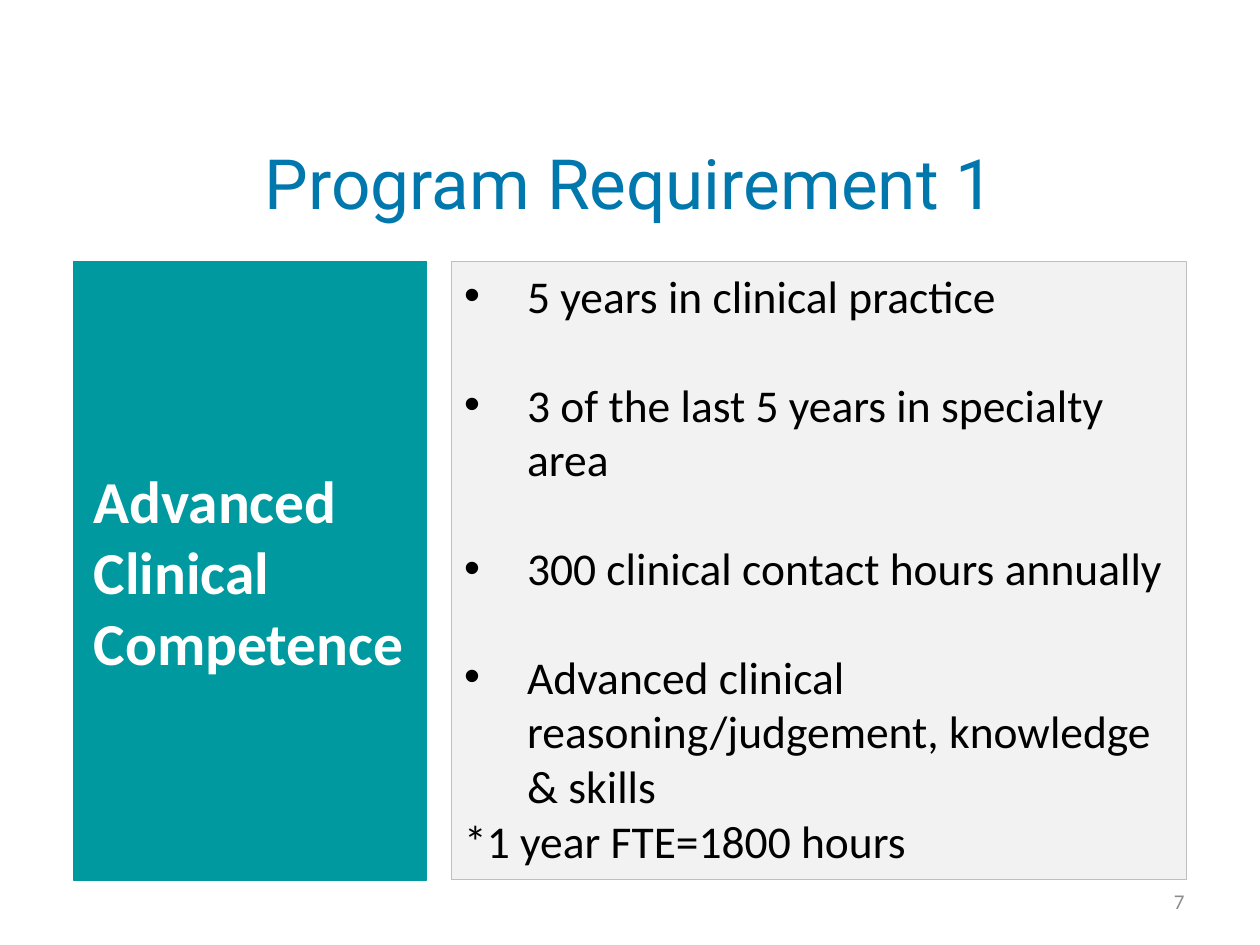
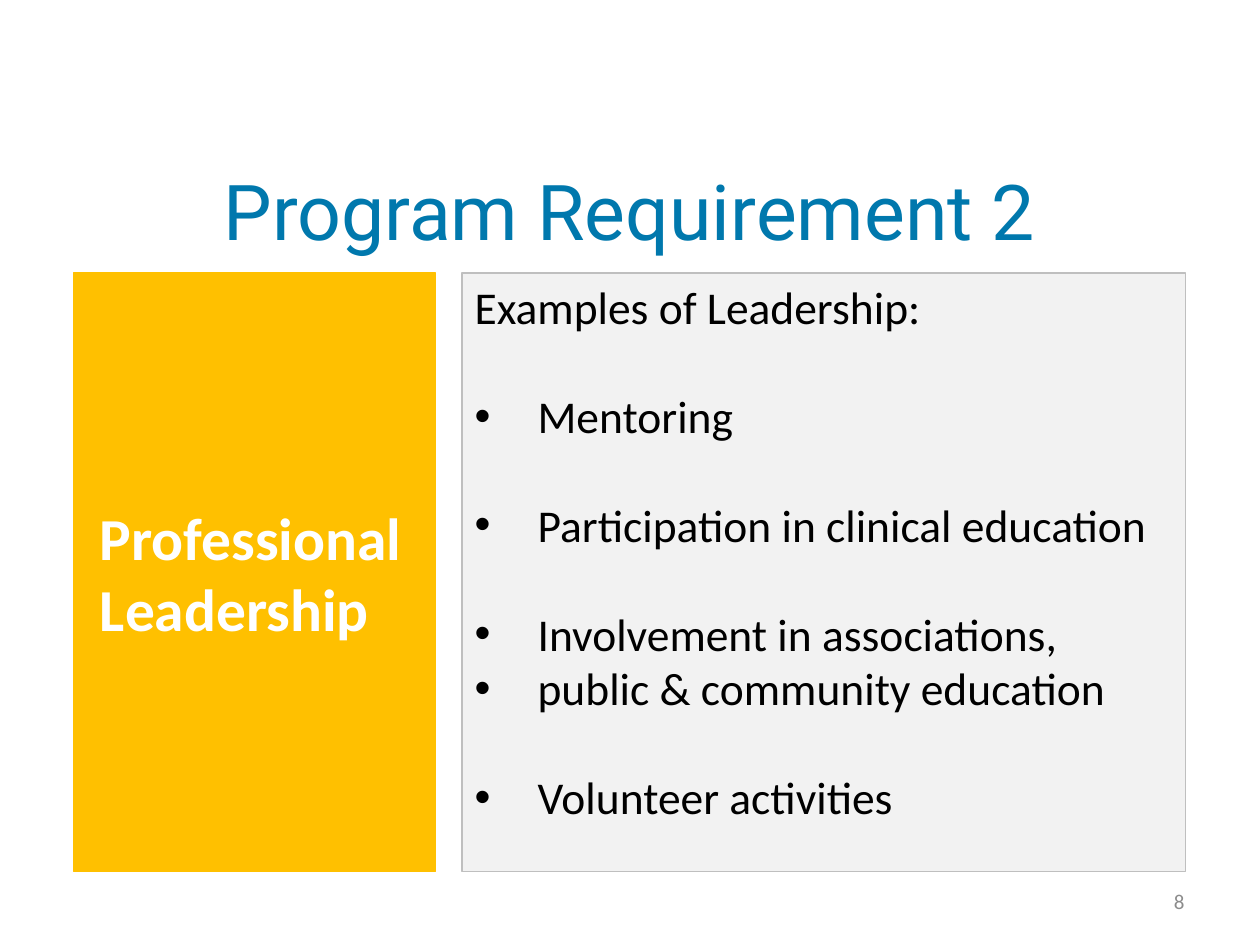
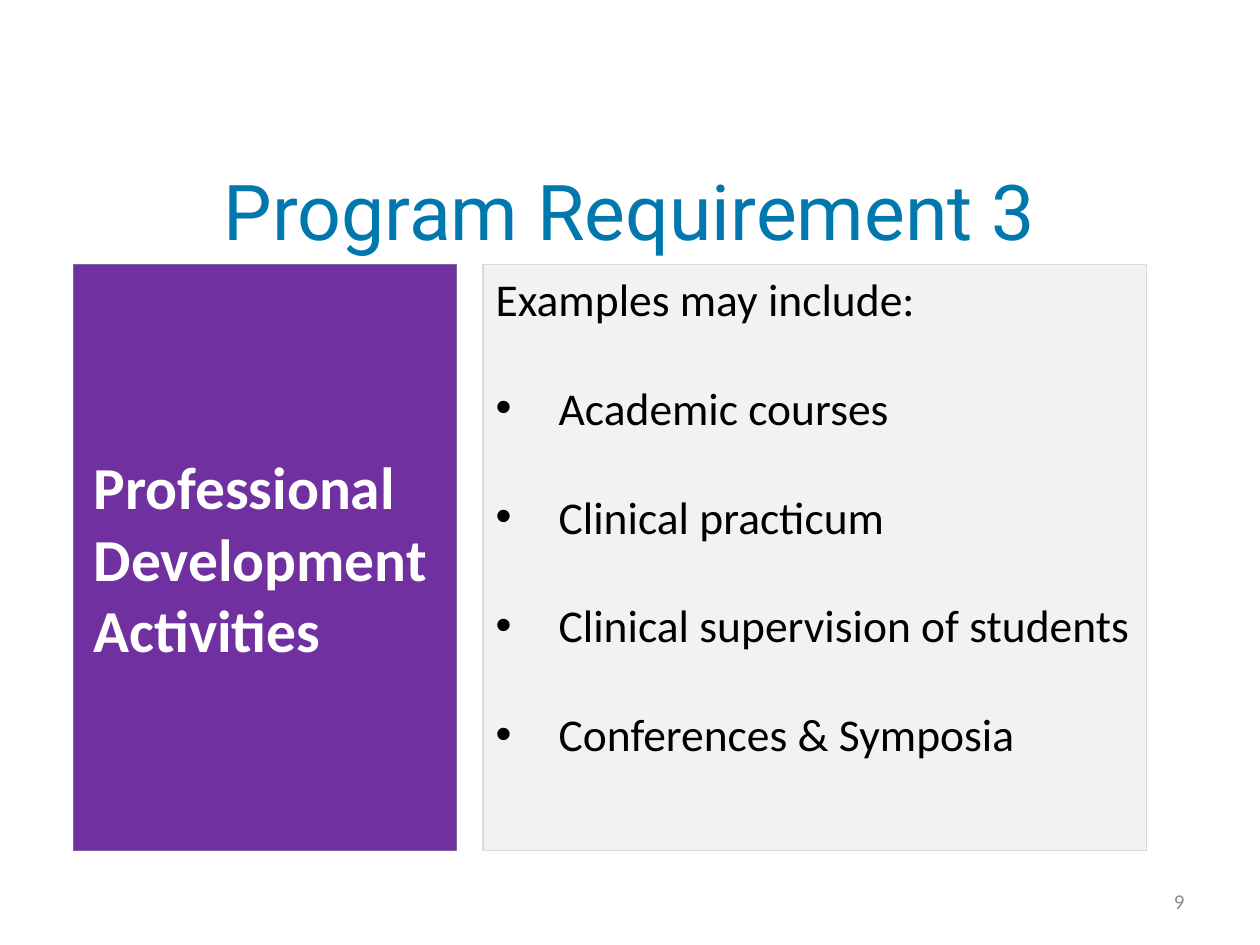
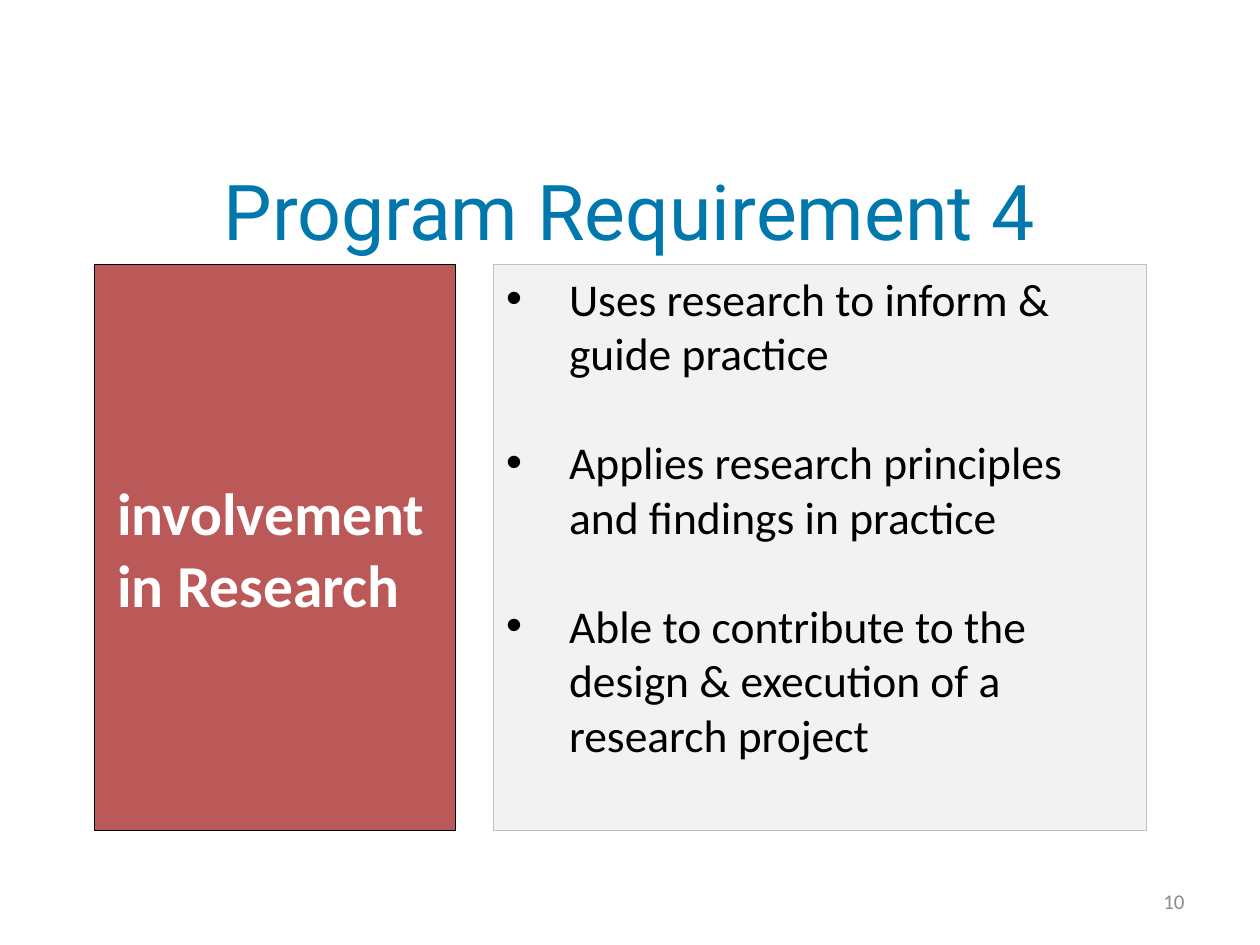
from dataclasses import dataclass
from lxml.etree import SubElement as add_sub
from pptx import Presentation
from pptx.dml.color import RGBColor as Rgb
from pptx.enum.shapes import MSO_SHAPE as Shape
from pptx.enum.text import MSO_ANCHOR as Anchor, MSO_AUTO_SIZE as Fit, PP_ALIGN as Align
from pptx.oxml.ns import qn
from pptx.util import Inches, Pt

COLS, ROWS = 120, 90
UNIT = Inches(10) / COLS
BLUE, GREY, PALE = "0078AD", "8C8C8C", "F2F2F2"
WHITE, BLACK, SILVER = "FFFFFF", "000000", "BFBFBF"
FIRST = 7
GAP = 31


@dataclass
class Page:
    """Content and grid measures of one requirement slide."""
    label: list
    items: list
    box: tuple
    split: float
    gutter: float
    fill: str
    edge: str
    inset: float
    rim: str = SILVER
    rule: float = 0.75
    head: tuple = (15, 44)


PAGES = [
    Page(["Advanced Clinical Competence"],
         ["•5 years in clinical practice", "•3 of the last 5 years in specialty area",
          "•300 clinical contact hours annually",
          "•Advanced clinical reasoning/judgement, knowledge & skills",
          "-*1 year FTE=1800 hours"],
         (7, 24.9, 106, 58.9), 33.6, 2.4, "00999F", "00999F", 0.16,
         rule=0.5, head=(9.6, 39.6)),
    Page(["Professional", "Leadership"],
         ["Examples of Leadership:", "•Mentoring", "•Participation in clinical education",
          "•Involvement in associations,", "-•public & community education",
          "•Volunteer activities"],
         (7, 26, 105.9, 57), 34.5, 2.5, "FFC000", "FFC000", 0.21),
    Page(["Professional", "Development", "Activities"],
         ["Examples may include:", "•Academic courses", "•Clinical practicum",
          "•Clinical supervision of students", "•Conferences & Symposia"],
         (7, 25.2, 102.2, 55.8), 36.5, 2.5, "7030A0", "8064A2", 0.16, rim="D9D9D9"),
    Page(["involvement in Research"],
         ["•Uses research to inform & guide practice",
          "•Applies research principles and findings in practice",
          "•Able to contribute to the design & execution of a research project"],
         (9, 25.2, 100.2, 53.9), 34.4, 3.6, "BB5959", BLACK, 0.18),
]


def color(code):
    """Turn a hex string into a colour."""
    return Rgb.from_string(code)


def grid(*cells):
    """Turn grid cells into lengths."""
    return [round(cell * UNIT) for cell in cells]


def place(shape, box):
    """Move a shape to a box given in grid cells."""
    shape.left, shape.top, shape.width, shape.height = grid(*box)


def paint(shape, fill, edge, rule):
    """Give a shape a plain fill and outline."""
    shape.fill.solid()
    shape.fill.fore_color.rgb = color(fill)
    shape.line.color.rgb = color(edge)
    shape.line.width = Pt(rule)


def style(para, size, tone, face="Calibri", bold=False, align=Align.LEFT):
    """Set the font and spacing of a paragraph."""
    para.alignment = align
    para.space_before = para.space_after = Pt(0)
    font = para.font
    font.size, font.name, font.bold = Pt(size), face, bold
    font.color.rgb = color(tone)


def frame(shape, anchor):
    """Prepare a wrapping text frame of fixed size."""
    text = shape.text_frame
    text.word_wrap, text.auto_size = True, Fit.NONE
    text.vertical_anchor = anchor
    return text


def indent(para, mark):
    """Set a hanging bullet or plain text at the margin."""
    props = para._p.get_or_add_pPr()
    step = Inches(0.5) if mark else 0
    props.set("marL", str(step))
    props.set("indent", str(-step))
    if mark:
        add_sub(props, qn("a:buFont"), typeface="Arial")
        add_sub(props, qn("a:buChar"), char="•")
    else:
        add_sub(props, qn("a:buNone"))


def title(slide, number, height, size):
    """Fill the title placeholder."""
    place(slide.shapes.title, (6, 12.5, 108, height))
    text = frame(slide.shapes.title, Anchor.MIDDLE)
    text.text = f"Program Requirement {number}"
    style(text.paragraphs[0], size, BLUE, "Roboto", align=Align.CENTER)


def footer(slide, number):
    """Write the slide number."""
    box = slide.shapes.add_textbox(*grid(86, 83.4, 28, 4.8))
    text = frame(box, Anchor.MIDDLE)
    text.text = str(number)
    style(text.paragraphs[0], 12, GREY, align=Align.RIGHT)


def panel(slide, page, box):
    """Fill the body placeholder; a leading dash closes the gap above."""
    body = slide.placeholders[1]
    place(body, box)
    paint(body, PALE, page.rim, page.rule)
    text = frame(body, Anchor.TOP)
    lines = [item.removeprefix("-") for item in page.items]
    text.text = "\n".join(line.removeprefix("•") for line in lines)
    for spot, (para, item, line) in enumerate(zip(text.paragraphs, page.items, lines)):
        indent(para, line.startswith("•"))
        style(para, 26, BLACK)
        if spot and not item.startswith("-"):
            para.space_before = Pt(GAP)


def label(slide, page, box):
    """Draw the coloured block that names the requirement."""
    block = slide.shapes.add_shape(Shape.RECTANGLE, *grid(*box))
    block.shadow.inherit = False
    paint(block, page.fill, page.edge, 0.75)
    text = frame(block, Anchor.MIDDLE)
    text.margin_left, text.margin_right = Inches(page.inset), Inches(0.05)
    text.text = "\n".join(page.label)
    for para in text.paragraphs:
        style(para, 34, WHITE, bold=True)


def build(deck, page, number):
    """Build one requirement slide."""
    slide = deck.slides.add_slide(deck.slide_layouts[1])
    left, top, width, height = page.box
    start = page.split + page.gutter
    title(slide, number, *page.head)
    footer(slide, FIRST + number - 1)
    panel(slide, page, (left + start, top, width - start, height))
    label(slide, page, (left, top, page.split, height))


def main():
    """Build and save the deck."""
    deck = Presentation()
    deck.slide_width, deck.slide_height = grid(COLS, ROWS)
    for number, page in enumerate(PAGES, 1):
        build(deck, page, number)
    deck.save("out.pptx")


if __name__ == "__main__":
    main()
